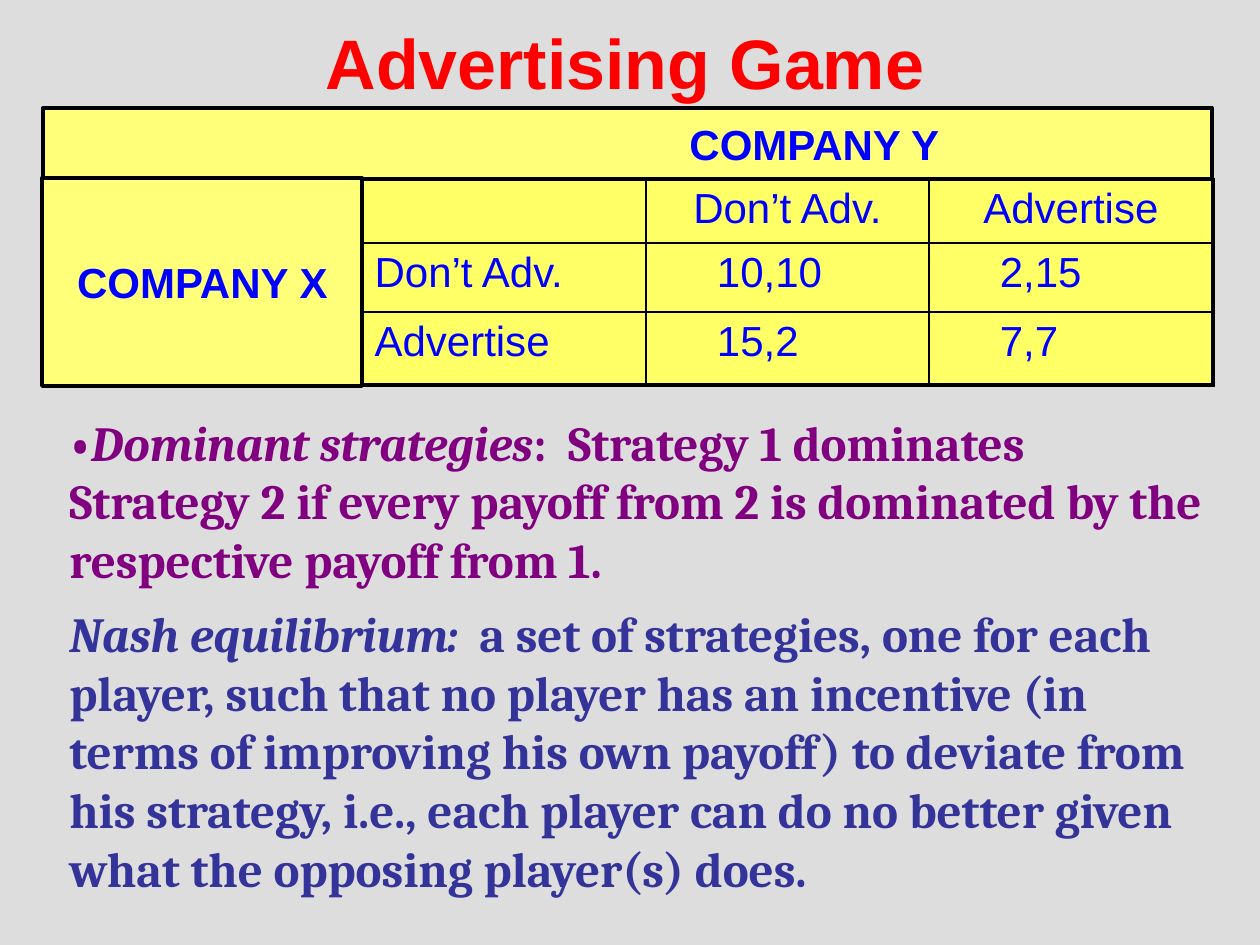
from pptx import Presentation, util as u
from pptx.dml.color import RGBColor
from pptx.enum import shapes, text
from pptx.oxml import parse_xml
from pptx.oxml.ns import nsdecls

COLORS = {"bg": "DDDDDD", "title": "FF0000", "label": "0000FF", "cell": "FFFF66",
          "company": "FFFF7A", "line": "000000", "dominant": "800080", "nash": "333399"}
TITLE = ("Advertising Game", (58, 15, 1134, 93))
PAYOFFS = [["", "Don’t Adv.", "Advertise"],
           ["Don’t Adv.", "10,10", "2,15"],
           ["Advertise", "15,2", "7,7"]]
TABLE_LEFT, TABLE_TOP = 362, 179
COL_WIDTHS, ROW_HEIGHTS = [284, 283, 284], [64, 69, 73]
PAYOFF_INDENT = 58
DEFINITIONS = [
    ("dominant", (57, 406, 1159, 189),
     [("•", False), ("Dominant strategies", True),
      (":  Strategy 1 dominates Strategy 2 if every payoff from 2 is dominated "
       "by the respective payoff from 1.", False)]),
    ("nash", (57, 597, 1140, 307),
     [("Nash equilibrium:  ", True),
      ("a set of strategies, one for each player, such that no player has an incentive "
       "(in terms of improving his own payoff) to deviate from his strategy, i.e., each "
       "player can do no better given what the opposing player(s) does.", False)]),
]
COMPANIES = [("COMPANY Y", (43, 108, 1169, 71), 386),
             ("COMPANY X", (42, 178, 320, 208), 13)]
THIN, THICK = 1, 2.25


def px(n):
    return round(n * 914400 / 126)


def rgb(name):
    return RGBColor.from_string(COLORS[name])


def style(r, size, color, font="Arial", bold=False, italic=False):
    r.font.size = u.Pt(size)
    r.font.name = font
    r.font.bold = bold
    r.font.italic = italic
    r.font.color.rgb = rgb(color)


def add_box(s, box):
    tf = s.shapes.add_textbox(*map(px, box)).text_frame
    tf.word_wrap = True
    return tf


def add_title(s):
    words, box = TITLE
    tf = add_box(s, box)
    tf.vertical_anchor = text.MSO_ANCHOR.MIDDLE
    tf.text = words
    p = tf.paragraphs[0]
    p.alignment = text.PP_ALIGN.CENTER
    style(p.runs[0], 40, "title", bold=True)


def add_border(cell, side, width):
    cell._tc.get_or_add_tcPr().append(parse_xml(
        f'<a:ln{side} {nsdecls("a")} w="{u.Pt(width)}"><a:solidFill>'
        f'<a:srgbClr val="{COLORS["line"]}"/></a:solidFill></a:ln{side}>'))


def add_payoffs(s):
    n_rows, n_cols = len(ROW_HEIGHTS), len(COL_WIDTHS)
    box = (TABLE_LEFT, TABLE_TOP, sum(COL_WIDTHS), sum(ROW_HEIGHTS))
    table = s.shapes.add_table(n_rows, n_cols, *map(px, box)).table
    table.first_row = table.horz_banding = False
    for col, width in zip(table.columns, COL_WIDTHS):
        col.width = px(width)
    for i, height in enumerate(ROW_HEIGHTS):
        table.rows[i].height = px(height)
        for j in range(n_cols):
            cell = table.cell(i, j)
            widths = {"L": THIN, "R": THICK if j == n_cols - 1 else THIN,
                      "T": THIN, "B": THICK if i == n_rows - 1 else THIN}
            for side, width in widths.items():
                add_border(cell, side, width)
            cell.fill.solid()
            cell.fill.fore_color.rgb = rgb("cell")
            cell.text_frame.text = PAYOFFS[i][j]
            p = cell.text_frame.paragraphs[0]
            if i == 0:
                p.alignment = text.PP_ALIGN.CENTER
            elif j > 0:
                cell.margin_left = px(13 + PAYOFF_INDENT)
            for r in p.runs:
                style(r, 24, "label")


def add_definitions(s):
    for color, box, runs in DEFINITIONS:
        p = add_box(s, box).paragraphs[0]
        for words, italic in runs:
            r = p.add_run()
            r.text = words
            style(r, 28, color, "Cambria", True, italic)


def add_companies(s):
    for name, box, inset in COMPANIES:
        sp = s.shapes.add_shape(shapes.MSO_SHAPE.RECTANGLE, *map(px, box))
        sp.shadow.inherit = False
        sp.fill.solid()
        sp.fill.fore_color.rgb = rgb("company")
        sp.line.color.rgb = rgb("line")
        sp.line.width = u.Pt(THICK)
        tf = sp.text_frame
        tf.word_wrap = True
        tf.margin_left = px(inset)
        tf.vertical_anchor = text.MSO_ANCHOR.MIDDLE
        tf.text = name
        p = tf.paragraphs[0]
        p.alignment = text.PP_ALIGN.CENTER
        style(p.runs[0], 24, "label", bold=True)


def main():
    prs = Presentation()
    prs.slide_width, prs.slide_height = px(1260), px(945)
    s = prs.slides.add_slide(prs.slide_layouts[6])
    s.background.fill.solid()
    s.background.fill.fore_color.rgb = rgb("bg")
    add_title(s)
    add_payoffs(s)
    add_definitions(s)
    add_companies(s)
    prs.save("out.pptx")


if __name__ == "__main__":
    main()
